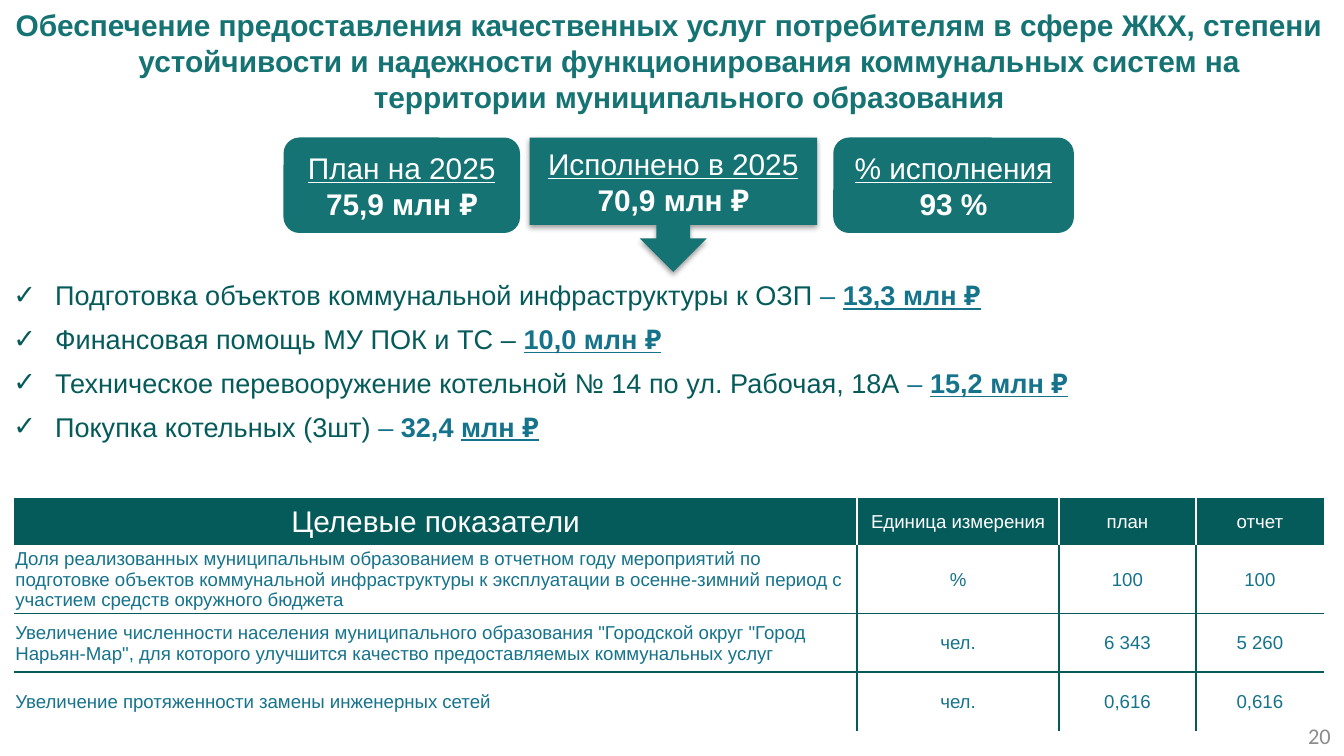
import dataclasses

import lxml.etree
import pptx
import pptx.dml.color
import pptx.enum.shapes
import pptx.enum.text
import pptx.oxml
import pptx.oxml.ns
import pptx.util

COLORS = {
    "teal": "167373",
    "dark": "055A5A",
    "blue": "16738C",
    "white": "FFFFFF",
    "gray": "8C8C8C",
    "shadow": "000000",
}
SLIDE_WIDTH = pptx.util.Inches(10)
SLIDE_HEIGHT = SLIDE_WIDTH * 9 // 16
ALIGN = pptx.enum.text.PP_ALIGN
MIDDLE = pptx.enum.text.MSO_ANCHOR.MIDDLE
SHAPES = pptx.enum.shapes.MSO_SHAPE

TITLE = (
    "Обеспечение предоставления качественных услуг потребителям в сфере ЖКХ, "
    "степени устойчивости и надежности функционирования коммунальных систем "
    "на территории муниципального образования"
)
PLAIN, DASH, BOLD, SUM = (
    ("dark", False, False),
    ("blue", False, False),
    ("blue", True, False),
    ("blue", True, True),
)
EXPENSES = [
    [("Подготовка объектов коммунальной инфраструктуры к ОЗП ", PLAIN), ("– ", DASH), ("13,3 млн ₽", SUM)],
    [("Финансовая помощь МУ ПОК и ТС – ", PLAIN), ("10,0 млн ₽", SUM)],
    [("Техническое перевооружение котельной № 14 по ул. Рабочая, 18А ", PLAIN), ("– ", DASH), ("15,2 млн ₽", SUM)],
    [("Покупка котельных (3шт) ", PLAIN), ("– ", DASH), ("32,4 ", BOLD), ("млн ₽", SUM)],
]
CARDS = [
    (SHAPES.DOWN_ARROW_CALLOUT, 39.4, 21.4, 100, "Исполнено в 2025", "70,9 млн ₽"),
    (SHAPES.ROUNDED_RECTANGLE, 21.1, 17.6, 71, "План на 2025", "75,9 млн ₽"),
    (SHAPES.ROUNDED_RECTANGLE, 62, 17.9, 71, "% исполнения", "93 %"),
]
INDICATORS = [
    ["Целевые показатели", "Единица измерения", "план", "отчет"],
    [
        "Доля реализованных муниципальным образованием в отчетном году мероприятий "
        "по подготовке объектов коммунальной инфраструктуры к эксплуатации "
        "в осенне-зимний период с участием средств окружного бюджета",
        "%", "100", "100",
    ],
    [
        'Увеличение численности населения муниципального образования "Городской округ '
        '"Город Нарьян-Мар", для которого улучшится качество предоставляемых коммунальных услуг',
        "чел.", "6 343", "5 260",
    ],
    ["Увеличение протяженности замены инженерных сетей", "чел.", "0,616", "0,616"],
]
COLUMN_WEIGHTS = [6.27, 1.5, 1.02, 0.95]
ROW_WEIGHTS = [0.35, 0.51, 0.44, 0.44]


@dataclasses.dataclass
class Box:
    left: float
    top: float
    width: float
    height: float

    def place(self):
        return (
            int(SLIDE_WIDTH * self.left / 100),
            int(SLIDE_HEIGHT * self.top / 100),
            int(SLIDE_WIDTH * self.width / 100),
            int(SLIDE_HEIGHT * self.height / 100),
        )


def rgb(name):
    return pptx.dml.color.RGBColor.from_string(COLORS[name])


def add_xml(parent, tag, **attributes):
    return lxml.etree.SubElement(parent, pptx.oxml.ns.qn(tag), attributes)


def style(font, size=None, color=None, bold=None, underline=None, name=None):
    if size:
        font.size = pptx.util.Pt(size)
    if name:
        font.name = name
    if color:
        font.color.rgb = rgb(color)
    font.bold = bold
    font.underline = underline


def indent(para, amount):
    properties = para._p.get_or_add_pPr()
    properties.set("marL", str(pptx.util.Inches(amount)))
    properties.set("indent", str(-pptx.util.Inches(amount)))
    return properties


def move(shape, box):
    shape.left, shape.top, shape.width, shape.height = box.place()
    shape.text_frame.word_wrap = True
    shape.text_frame.auto_size = pptx.enum.text.MSO_AUTO_SIZE.NONE


def fill_title(page, box):
    title = page.shapes.title
    move(title, box)
    title.text_frame.vertical_anchor = MIDDLE
    title.text_frame.text = TITLE
    para = title.text_frame.paragraphs[0]
    para.alignment = ALIGN.CENTER
    indent(para, 0.3)
    style(para.font, 16, "teal", True, name="Arial")


def fill_expenses(page, box):
    body = page.placeholders[1]
    move(body, box)
    frame = body.text_frame
    frame.vertical_anchor = pptx.enum.text.MSO_ANCHOR.TOP
    for index, spans in enumerate(EXPENSES):
        para = frame.add_paragraph() if index else frame.paragraphs[0]
        para.alignment = ALIGN.JUSTIFY
        para.space_before = pptx.util.Pt(6 if index else 0)
        properties = indent(para, 0.31)
        add_xml(properties, "a:buFont", typeface="Arial")
        add_xml(properties, "a:buChar", char="✓")
        style(para.font, 14.5, name="Arial")
        for text, (color, bold, underline) in spans:
            span = para.add_run()
            span.text = text
            style(span.font, color=color, bold=bold, underline=underline)


def add_shadow(shape):
    effects = shape._element.spPr.find(pptx.oxml.ns.qn("a:effectLst"))
    shadow = add_xml(
        effects, "a:outerShdw",
        blurRad=str(pptx.util.Pt(3.1)), dist=str(pptx.util.Pt(1.6)), dir="5400000", rotWithShape="0",
    )
    color = add_xml(shadow, "a:srgbClr", val=COLORS["shadow"])
    add_xml(color, "a:alpha", val="38000")


def add_cards(page, box):
    for kind, left, width, height, label, amount in CARDS:
        place = Box(left, box.top, width, box.height * height / 100).place()
        card = page.shapes.add_shape(kind, *place)
        card.shadow.inherit = False
        card.fill.solid()
        card.fill.fore_color.rgb = rgb("teal")
        card.line.fill.background()
        if kind == SHAPES.DOWN_ARROW_CALLOUT:
            add_shadow(card)
        frame = card.text_frame
        frame.vertical_anchor = MIDDLE
        frame.text = f"{label}\n{amount}"
        for para, bold in zip(frame.paragraphs, (False, True)):
            para.alignment = ALIGN.CENTER
            style(para.font, 16, "white", bold, not bold, "Arial")


def add_borders(cell, sides, color):
    properties = cell._tc.get_or_add_tcPr()
    for side in "LRTB":
        line = add_xml(properties, f"a:ln{side}", w=str(pptx.util.Pt(1)))
        if side in sides:
            add_xml(add_xml(line, "a:solidFill"), "a:srgbClr", val=COLORS[color])
        else:
            add_xml(line, "a:noFill")


def add_indicators(page, box):
    left, top, width, height = box.place()
    last_row, last_column = len(ROW_WEIGHTS) - 1, len(COLUMN_WEIGHTS) - 1
    table = page.shapes.add_table(last_row + 1, last_column + 1, left, top, width, height).table
    table.first_row = table.horz_banding = False
    for column, weight in zip(table.columns, COLUMN_WEIGHTS):
        column.width = int(width * weight / sum(COLUMN_WEIGHTS))
    for row, weight in zip(table.rows, ROW_WEIGHTS):
        row.height = int(height * weight / sum(ROW_WEIGHTS))
    for row, texts in enumerate(INDICATORS):
        for column, text in enumerate(texts):
            cell = table.cell(row, column)
            sides = ("L" if column else "") + ("R" if column < last_column else "")
            sides += ("T" if row > 1 else "") + ("B" if 0 < row < last_row else "")
            add_borders(cell, sides, "dark" if row else "white")
            if row:
                cell.fill.background()
            else:
                cell.fill.solid()
                cell.fill.fore_color.rgb = rgb("dark")
            cell.margin_left = cell.margin_right = cell.margin_top = pptx.util.Inches(0.01)
            cell.margin_bottom = 0
            cell.vertical_anchor = MIDDLE
            cell.text = text
            para = cell.text_frame.paragraphs[0]
            para.alignment = ALIGN.LEFT if row and not column else ALIGN.CENTER
            style(para.font, 10 if row or column else 16, "blue" if row else "white", name="Arial")


def add_page_number(page, box):
    number = page.shapes.add_textbox(*box.place())
    number.text_frame.word_wrap = True
    number.text_frame.vertical_anchor = MIDDLE
    number.text_frame.text = "20"
    para = number.text_frame.paragraphs[0]
    para.alignment = ALIGN.RIGHT
    style(para.font, 12, "gray", name="Calibri")


def main():
    deck = pptx.Presentation()
    deck.slide_width, deck.slide_height = SLIDE_WIDTH, SLIDE_HEIGHT
    page = deck.slides.add_slide(deck.slide_layouts[1])
    fill_expenses(page, Box(0, 36, 99.6, 23.64))
    fill_title(page, Box(0, 1, 99.6, 14.04))
    add_cards(page, Box(21.1, 18.2, 58.8, 17.78))
    add_page_number(page, Box(76.7, 94.7, 23.3, 5.3))
    add_indicators(page, Box(1.05, 65.84, 97.45, 30.85))
    deck.save("out.pptx")


if __name__ == "__main__":
    main()
